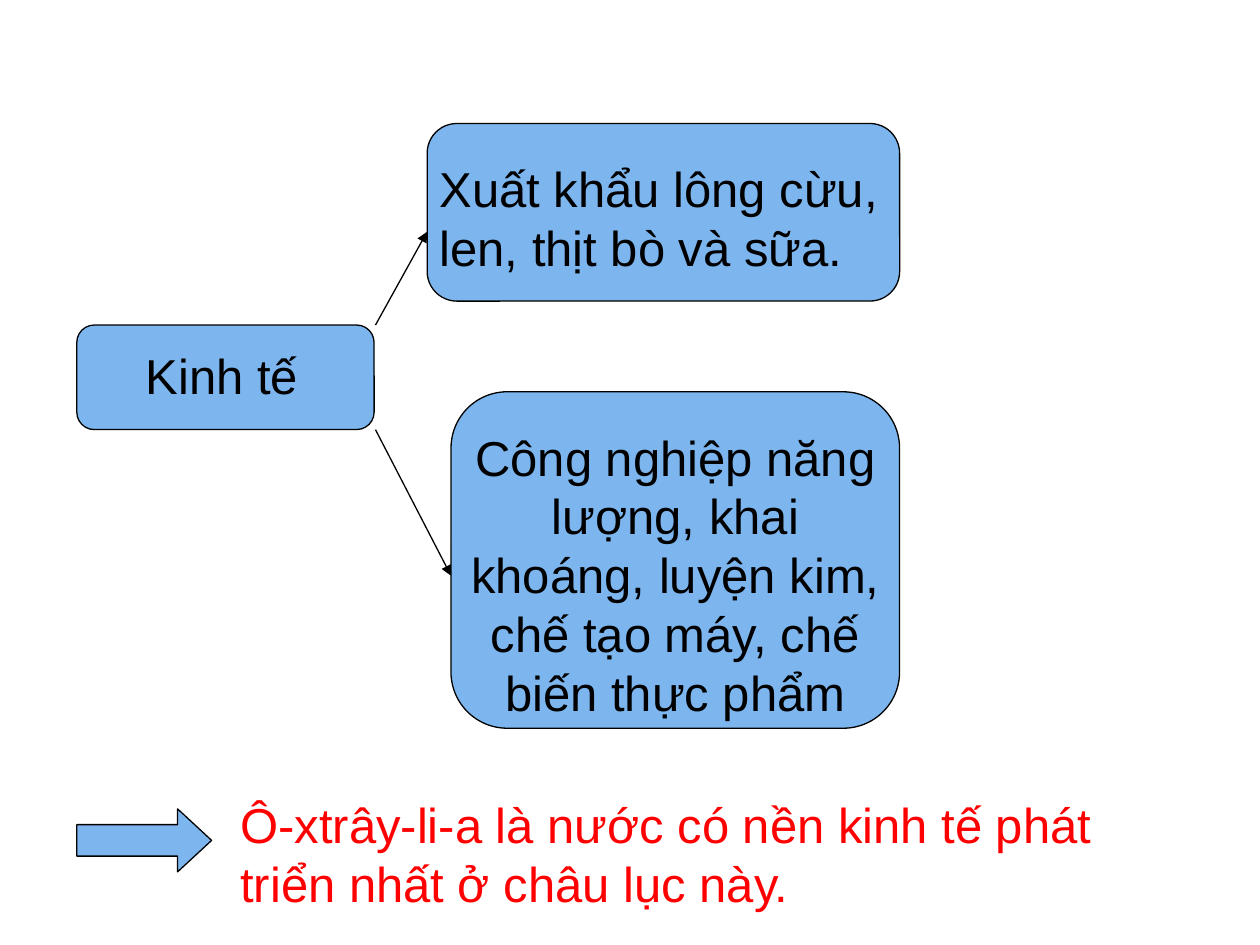
import pptx
import pptx.dml.color
import pptx.enum.shapes
import pptx.enum.text
import pptx.oxml
import pptx.oxml.ns
import pptx.util

Inches = pptx.util.Inches
SHAPES = pptx.enum.shapes.MSO_SHAPE
ALIGN = pptx.enum.text.PP_ALIGN

BLUE, BLACK, RED = "7DB6EF", "000000", "FF0000"
FONT = {"name": "Arial", "size": pptx.util.Pt(28)}
FRAME = {"word_wrap": True,
         "auto_size": pptx.enum.text.MSO_AUTO_SIZE.SHAPE_TO_FIT_TEXT}


def apply_format(target, values):
    for name, value in values.items():
        setattr(target, name, value)


def paint(color_format, hex_color):
    color_format.rgb = pptx.dml.color.RGBColor.from_string(hex_color)


def outline(line):
    paint(line.color, BLACK)
    line.width = pptx.util.Pt(0.75)


def add_block(slide, preset, bounds, adjustments):
    block = slide.shapes.add_shape(preset, *map(Inches, bounds))
    block.shadow.inherit = False
    for index, value in enumerate(adjustments):
        block.adjustments[index] = value
    block.fill.solid()
    paint(block.fill.fore_color, BLUE)
    outline(block.line)


def add_label(slide, text, bounds, align=ALIGN.LEFT, color=BLACK):
    frame = slide.shapes.add_textbox(*map(Inches, bounds)).text_frame
    apply_format(frame, FRAME)
    paragraph = frame.paragraphs[0]
    paragraph.alignment = align
    run = paragraph.add_run()
    run.text = text
    apply_format(run.font, FONT)
    paint(run.font.color, color)


def add_arrow(slide, start, end):
    arrow = slide.shapes.add_connector(
        pptx.enum.shapes.MSO_CONNECTOR.STRAIGHT, *map(Inches, start + end))
    outline(arrow.line)
    namespace = pptx.oxml.ns.nsdecls("a")
    arrow.line._get_or_add_ln().append(
        pptx.oxml.parse_xml(f'<a:tailEnd {namespace} type="triangle"/>'))
    arrow._element.spPr.append(
        pptx.oxml.parse_xml(f"<a:effectLst {namespace}/>"))


def main():
    deck = pptx.Presentation()
    apply_format(deck, {"slide_width": Inches(10),
                        "slide_height": Inches(7.5)})
    slide = deck.slides.add_slide(deck.slide_layouts[6])

    # Topic and its two branches: box bounds, label bounds, text, alignment
    economy = (0.61, 2.58, 2.36, 0.83)
    exports = (3.39, 0.98, 3.75, 1.41)
    industry = (3.58, 3.11, 3.56, 2.67)
    boxes = [
        (economy, (1.01, 2.69, 1.5, 0.57), "Kinh tế", ALIGN.CENTER),
        (exports, (3.39, 1.21, 3.75, 1.03),
         "Xuất khẩu lông cừu, len, thịt bò và sữa.", ALIGN.LEFT),
        (industry, (3.58, 3.34, 3.56, 2.43),
         "Công nghiệp năng lượng, khai khoáng, luyện kim, chế tạo máy, "
         "chế biến thực phẩm", ALIGN.CENTER),
    ]
    for box, label, text, align in boxes:
        add_block(slide, SHAPES.ROUNDED_RECTANGLE, box, [0.167])
        add_label(slide, text, label, align)

    # Arrows from the topic's right corners to the branches
    left, top, width, height = economy
    right = left + width + 0.01
    add_arrow(slide, (right, top), (exports[0], 1.84))
    add_arrow(slide, (right, top + height), (industry[0], 4.57))

    # Conclusion
    add_block(slide, SHAPES.RIGHT_ARROW, (0.61, 6.42, 1.07, 0.5), [0.5, 0.54])
    add_label(slide,
              "Ô-xtrây-li-a là nước có nền kinh tế phát triển nhất "
              "ở châu lục này.",
              (1.81, 6.26, 7.6, 1.04), color=RED)

    deck.save("out.pptx")


if __name__ == "__main__":
    main()
